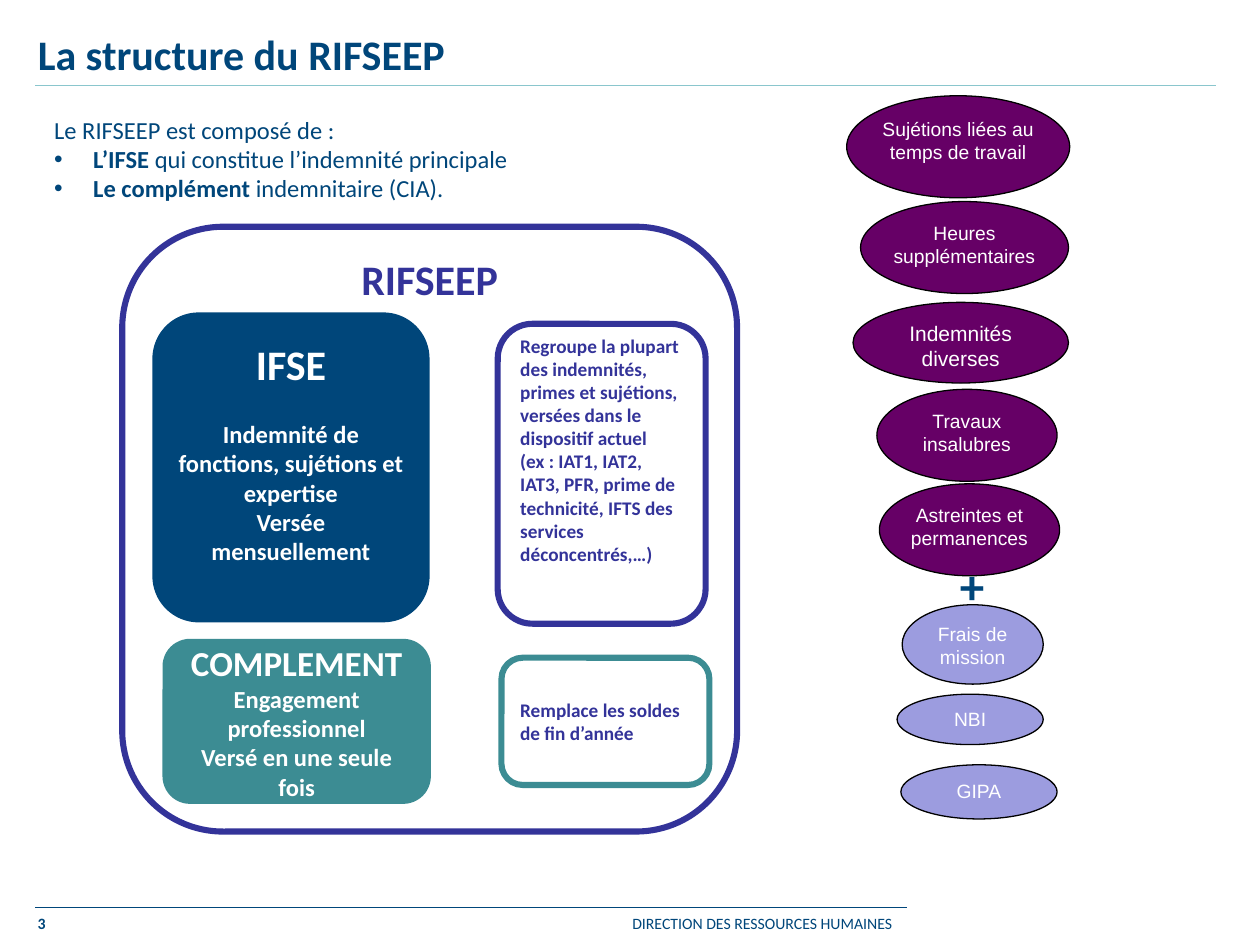
import dataclasses
import pptx
import pptx.dml.color
import pptx.enum.shapes
import pptx.enum.text
import pptx.oxml.ns
import pptx.util
from lxml import etree

SHAPE = pptx.enum.shapes.MSO_SHAPE
ALIGN = pptx.enum.text.PP_ALIGN
ANCHOR = pptx.enum.text.MSO_ANCHOR
CELL = pptx.util.Inches(0.1)
PAD = (1, 0.5, 1, 0.5)


@dataclasses.dataclass(frozen=True)
class Theme:
    """Colours, fonts and type sizes of the slide."""
    navy: str = "00467A"
    indigo: str = "333399"
    teal: str = "3C8C93"
    aqua: str = "8AC6CD"
    plum: str = "660066"
    lilac: str = "9C9CDF"
    white: str = "FFFFFF"
    black: str = "000000"
    main: str = "Calibri"
    oval: str = "Arial"
    plus: int = 28
    title: int = 24
    head: int = 20
    body: int = 14
    item: int = 12
    note: int = 11
    foot: int = 9
    thick: float = 3.5
    thin: float = 0.75


THEME = Theme()


def grid(*cells):
    """Turn grid cells into slide lengths."""
    return [int(cell * CELL) for cell in cells]


def tint(code):
    """Return the colour of a hex code."""
    return pptx.dml.color.RGBColor.from_string(code)


def style(run, size, color, bold=False, font=THEME.main):
    """Format one run."""
    run.font.size = pptx.util.Pt(size)
    run.font.name = font
    run.font.bold = bold
    run.font.color.rgb = tint(color)


def frame(shape, anchor, pad=PAD):
    """Prepare the text frame of a shape."""
    text = shape.text_frame
    text.word_wrap = True
    text.auto_size = pptx.enum.text.MSO_AUTO_SIZE.NONE
    text.vertical_anchor = anchor
    (text.margin_left, text.margin_top,
     text.margin_right, text.margin_bottom) = grid(*pad)
    return text


def write(shape, rows, color, bold=True, align=ALIGN.LEFT,
          anchor=ANCHOR.MIDDLE, pad=PAD, font=THEME.main):
    """Fill a shape with rows of text and size."""
    text = frame(shape, anchor, pad)
    text.text = "\n".join(row for row, _ in rows)
    for para, (_, size) in zip(text.paragraphs, rows):
        para.alignment = align
        for run in para.runs:
            style(run, size, color, bold, font)
    return text


def move(shape, at):
    """Put a placeholder on the grid."""
    shape.left, shape.top, shape.width, shape.height = grid(*at)


def box(slide, kind, at, fill=None, line=None, width=THEME.thick):
    """Draw a preset shape."""
    shape = slide.shapes.add_shape(kind, *grid(*at))
    shape.shadow.inherit = False
    if fill:
        shape.fill.solid()
        shape.fill.fore_color.rgb = tint(fill)
    else:
        shape.fill.background()
    if line:
        shape.line.color.rgb = tint(line)
        shape.line.width = pptx.util.Pt(width)
    else:
        shape.line.fill.background()
    return shape


def oval(slide, text, at, fill, size=THEME.note, side=0):
    """Draw a labelled ellipse."""
    shape = box(slide, SHAPE.OVAL, at, fill, THEME.black, THEME.thin)
    write(shape, [(text, size)], THEME.white, False, ALIGN.CENTER,
          ANCHOR.TOP, (side, 0.5, side, 0.5), THEME.oval)


def label(slide, text, at, size, bold=False):
    """Add a plain text box."""
    shape = slide.shapes.add_textbox(*grid(*at))
    write(shape, [(text, size)], THEME.navy, bold, anchor=ANCHOR.TOP)


def rule(slide, row, end, color):
    """Draw a horizontal rule."""
    line = slide.shapes.add_connector(
        pptx.enum.shapes.MSO_CONNECTOR.STRAIGHT, *grid(2.8, row, end, row))
    line.line.color.rgb = tint(color)
    line.line.width = pptx.util.Pt(THEME.thin)
    etree.SubElement(line._element.spPr, pptx.oxml.ns.qn("a:effectLst"))


def intro(shape):
    """Fill the body with a lead line and two bullets."""
    move(shape, (3.3, 8.6, 93.9, 8.1))
    text = frame(shape, ANCHOR.TOP)
    rows = [("", "Le RIFSEEP est composé de :"),
            ("L’IFSE", " qui constitue l’indemnité principale"),
            ("Le complément", " indemnitaire (CIA).")]
    for index, (strong, plain) in enumerate(rows):
        para = text.add_paragraph() if index else text.paragraphs[0]
        para.alignment = ALIGN.JUSTIFY
        para.space_before = pptx.util.Pt(0)
        props = para._p.get_or_add_pPr()
        hang = grid(3.1)[0] if strong else 0
        props.set("marL", str(hang))
        props.set("indent", str(-hang))
        mark = "a:buChar" if strong else "a:buNone"
        bullet = etree.SubElement(props, pptx.oxml.ns.qn(mark))
        if strong:
            bullet.set("char", "•")
        for part, bold in ((strong, True), (plain, False)):
            if part:
                run = para.add_run()
                run.text = part
                style(run, THEME.body, THEME.navy, bold)


def scheme(slide):
    """Draw the two parts of the scheme and their notes."""
    card = SHAPE.ROUNDED_RECTANGLE
    shape = box(slide, card, (12.9, 50.7, 21.3, 13.1), THEME.teal)
    write(shape, [("COMPLEMENT", THEME.head),
                  ("Engagement professionnel", THEME.body),
                  ("Versé en une seule fois", THEME.body)],
          THEME.white, align=ALIGN.CENTER)
    shape = box(slide, card, (12.1, 24.8, 22, 24.6), THEME.navy)
    text = write(shape, [
        ("IFSE", THEME.title),
        ("Indemnité de fonctions, sujétions et expertise", THEME.body),
        ("Versée mensuellement", THEME.body)],
        THEME.white, align=ALIGN.CENTER, pad=(1, 0.5, 1, 2.9))
    text.paragraphs[1].space_before = pptx.util.Pt(17)
    box(slide, card, (9.7, 18, 48.8, 48), line=THEME.indigo)
    shape = box(slide, card, (39.5, 25.7, 16.5, 23.8), line=THEME.indigo)
    write(shape, [
        ("Regroupe la plupart des indemnités, primes et sujétions, "
         "versées dans le dispositif actuel", THEME.note),
        ("(ex : IAT1, IAT2, IAT3, PFR, prime de technicité, IFTS des "
         "services déconcentrés,…)", THEME.note)],
        THEME.indigo, anchor=ANCHOR.TOP, pad=(1, 0, 1, 0))
    shape = box(slide, card, (39.8, 52.2, 16.5, 10.1), line=THEME.teal)
    write(shape, [("Remplace les soldes de fin d’année", THEME.note)],
          THEME.indigo)
    shape = box(slide, SHAPE.RECTANGLE, (27.4, 19.6, 13.4, 4.4), THEME.white)
    write(shape, [("RIFSEEP", THEME.title)], THEME.indigo,
          align=ALIGN.CENTER, anchor=ANCHOR.TOP)


def extras(slide):
    """Draw the column of other payments."""
    plum, lilac = THEME.plum, THEME.lilac
    oval(slide, "Sujétions liées au temps de travail",
         (67.2, 7.6, 17.7, 8.1), plum)
    oval(slide, "Heures supplémentaires", (68.3, 16, 16.5, 7.3), plum)
    oval(slide, "Indemnités diverses", (67.7, 24, 17.1, 6.4), plum,
         THEME.item, 1)
    oval(slide, "Travaux insalubres", (69.6, 30.9, 14.3, 7.3), plum)
    oval(slide, "Astreintes et permanences", (69.8, 38.4, 14.3, 7.3), plum)
    label(slide, "+", (75.2, 43.6, 6.2, 5.7), THEME.plus, True)
    oval(slide, "Frais de mission", (71.6, 48, 11.2, 6.3), lilac, side=1)
    oval(slide, "NBI", (71.2, 55.1, 11.6, 4), lilac, side=1)
    oval(slide, "GIPA", (71.5, 60.7, 12.4, 4.3), lilac, side=1)


def main():
    """Build and save the slide."""
    deck = pptx.Presentation()
    deck.slide_width, deck.slide_height = grid(100, 75)
    slide = deck.slides.add_slide(deck.slide_layouts[1])
    title = slide.shapes.title
    move(title, (2, 2.9, 94.5, 2.8))
    write(title, [("La structure du RIFSEEP", THEME.title)], THEME.navy)
    intro(slide.placeholders[1])
    rule(slide, 6.8, 96.5, THEME.aqua)
    rule(slide, 72, 72, THEME.navy)
    label(slide, "DIRECTION DES RESSOURCES HUMAINES",
          (49.2, 72, 27.6, 2.5), THEME.foot)
    label(slide, "3", (2, 72, 9.8, 2.4), THEME.foot, True)
    scheme(slide)
    extras(slide)
    deck.save("out.pptx")


if __name__ == "__main__":
    main()
